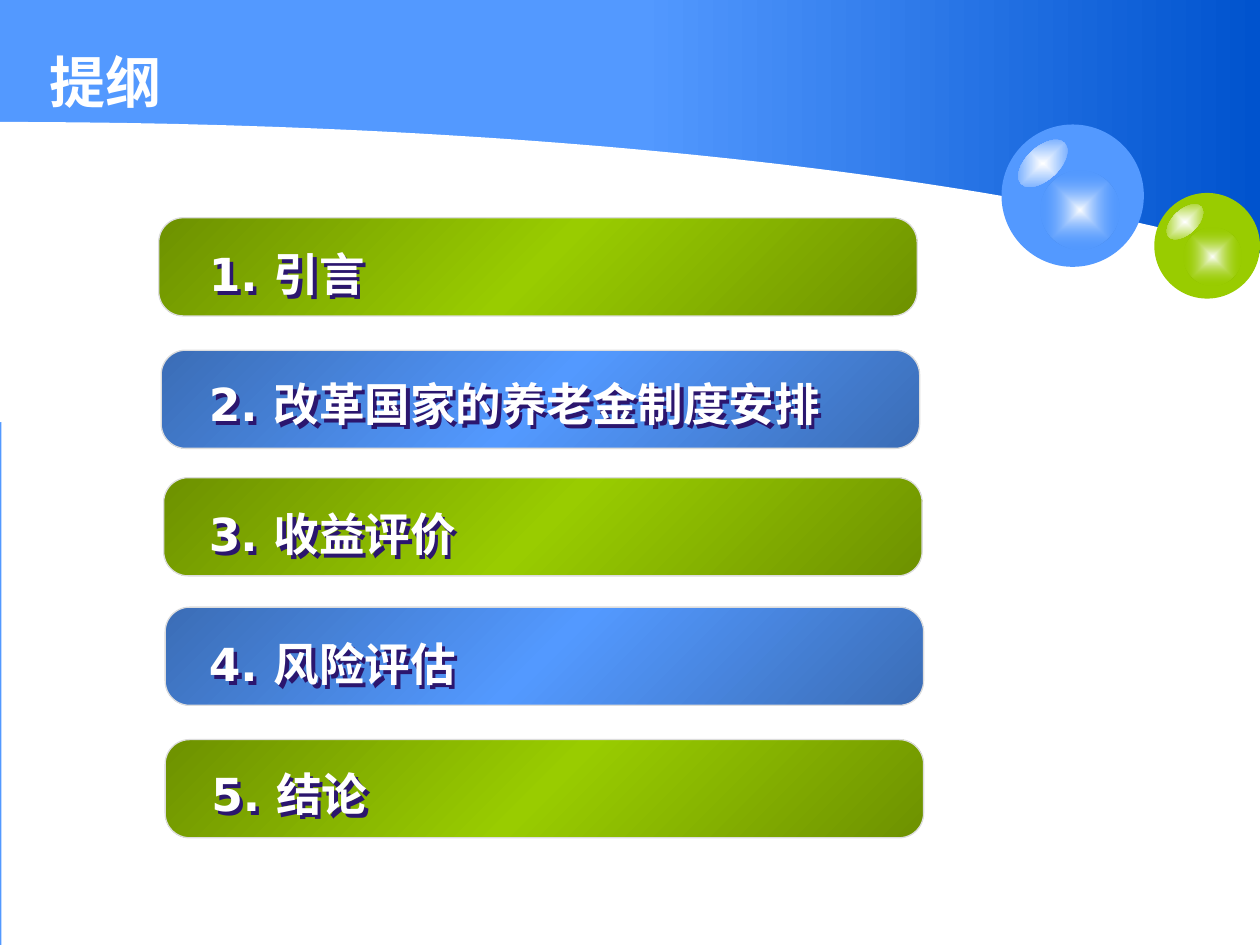
from typing import NamedTuple

from lxml import etree
from pptx import Presentation
from pptx.dml.color import RGBColor
from pptx.enum.shapes import MSO_SHAPE
from pptx.enum.text import MSO_ANCHOR
from pptx.oxml import parse_xml
from pptx.oxml.ns import qn
from pptx.util import Cm, Pt

RECT = MSO_SHAPE.RECTANGLE
ROUNDED = MSO_SHAPE.ROUNDED_RECTANGLE
OVAL = MSO_SHAPE.OVAL
MIDDLE = MSO_ANCHOR.MIDDLE
BOTTOM = MSO_ANCHOR.BOTTOM

WHITE = RGBColor(0xFF, 0xFF, 0xFF)
BLUE = RGBColor(0x53, 0x99, 0xFF)
DEEP_BLUE = RGBColor(0x00, 0x53, 0xCE)
GREEN = RGBColor(0x99, 0xCC, 0x00)
EDGE = RGBColor(0xDD, 0xDD, 0xDD)
SHADOW = RGBColor(0x2B, 0x16, 0x6E)

LATIN = "DejaVu Sans"
CJK = "Noto Sans CJK SC"
A_NS = 'xmlns:a="http://schemas.openxmlformats.org/drawingml/2006/main"'
LINEAR = '<a:lin ang="{}" scaled="1"/>'
RADIAL = ('<a:path path="shape"><a:fillToRect l="50000" t="50000" '
          'r="50000" b="50000"/></a:path>')
DARKEN = '<a:shade val="46275"/>'
CLEAR = '<a:alpha val="0"/>'


class Stop(NamedTuple):
    percent: int
    color: RGBColor
    change: str = ""


class Ball(NamedTuple):
    left: float
    top: float
    size: float
    color: RGBColor


class Item(NamedTuple):
    title: str
    color: RGBColor
    bar_left: float
    bar_top: float
    text_left: float
    text_width: float


BALLS = [Ball(23.27, 3.89, 2.13, GREEN), Ball(20.19, 2.51, 2.87, BLUE)]
ITEMS = [
    Item("引言", GREEN, 3.2, 4.39, 3.96, 12.88),
    Item("改革国家的养老金制度安排", BLUE, 3.25, 7.06, 3.96, 14.3),
    Item("收益评价", GREEN, 3.3, 9.63, 3.96, 14.3),
    Item("风险评估", BLUE, 3.33, 12.24, 3.96, 12.88),
    Item("结论", GREEN, 3.33, 14.91, 4.01, 14.3),
]
LABEL_TOP, LABEL_STEP = 4.72, 2.62
WAVE = [(0, 2.46), (10.19, 2.46), (19.74, 3.45), (25.45, 5.13)]
WAVE_STEPS = 60


def add_shape(s, kind, left: float, top: float, width: float, height: float):
    sp = s.shapes.add_shape(kind, Cm(left), Cm(top), Cm(width), Cm(height))
    sp.shadow.inherit = False
    sp.line.fill.background()
    return sp


def fill_solid(sp, color: RGBColor) -> None:
    sp.fill.solid()
    sp.fill.fore_color.rgb = color


def fill_gradient(sp, stops: list[Stop], course: str) -> None:
    marks = "".join(
        f'<a:gs pos="{stop.percent * 1000}"><a:srgbClr val="{stop.color}">'
        f'{stop.change}</a:srgbClr></a:gs>' for stop in stops)
    sp.fill.background()
    empty = sp._element.spPr.find(qn("a:noFill"))
    empty.getparent().replace(empty, parse_xml(
        f'<a:gradFill {A_NS} rotWithShape="1"><a:gsLst>{marks}</a:gsLst>'
        f'{course}</a:gradFill>'))


def bezier(t: float) -> tuple[int, int]:
    weights = ((1 - t) ** 3, 3 * t * (1 - t) ** 2, 3 * t * t * (1 - t), t ** 3)
    x, y = (sum(w * pt[i] for w, pt in zip(weights, WAVE)) for i in (0, 1))
    return Cm(x), Cm(y)


def add_wave(s) -> None:
    curve = [bezier(i / WAVE_STEPS) for i in range(WAVE_STEPS + 1)]
    builder = s.shapes.build_freeform(*curve[0])
    builder.add_line_segments(curve[1:] + [(Cm(0), Cm(8.51))], close=True)
    sp = builder.convert_to_shape()
    sp.shadow.inherit = False
    sp.line.fill.background()
    fill_solid(sp, WHITE)


def add_ball(s, ball: Ball) -> None:
    left, top, size, color = ball
    fill_solid(add_shape(s, OVAL, left, top, size, size), color)
    glow = add_shape(s, OVAL, left + 0.274 * size, top + 0.325 * size,
                     0.555 * size, 0.555 * size)
    fill_gradient(glow, [Stop(0, WHITE), Stop(100, color, CLEAR)], RADIAL)
    shine = add_shape(s, OVAL, left + 0.08 * size, top + 0.158 * size,
                      0.42 * size, 0.23 * size)
    shine.rotation = 317.2
    fill_gradient(shine, [Stop(0, WHITE), Stop(100, color)], RADIAL)


def add_text(s, left: float, top: float, width: float, height: float,
             anchor, size: int, runs: list[tuple[str, str]]):
    box = s.shapes.add_textbox(Cm(left), Cm(top), Cm(width), Cm(height))
    tf = box.text_frame
    tf.word_wrap = True
    tf.vertical_anchor = anchor
    p = tf.paragraphs[0]
    for text, font in runs:
        r = p.add_run()
        r.text = text
        r.font.size = Pt(size)
        r.font.bold = True
        r.font.color.rgb = WHITE
        r.font.name = font
        etree.SubElement(r.font._element, qn("a:ea"), typeface=font)
    return box


def add_bar(s, item: Item) -> None:
    bar = add_shape(s, ROUNDED, item.bar_left, item.bar_top, 15.29, 1.98)
    bar.adjustments[0] = 0.25
    ends = [Stop(0, item.color, DARKEN), Stop(50, item.color),
            Stop(100, item.color, DARKEN)]
    fill_gradient(bar, ends, LINEAR.format(2700000))
    bar.line.color.rgb = EDGE
    bar.line.width = Pt(0.75)


def add_label(s, index: int, item: Item) -> None:
    box = add_text(s, item.text_left, LABEL_TOP + index * LABEL_STEP,
                   item.text_width, 1.6, MIDDLE, 26,
                   [(f"{index + 1}. ", LATIN), (item.title, CJK)])
    box._element.spPr.append(parse_xml(
        f'<a:effectLst {A_NS}><a:outerShdw dist="35921" dir="2700000" '
        f'algn="ctr" rotWithShape="0"><a:srgbClr val="{SHADOW}"/>'
        f'</a:outerShdw></a:effectLst>'))


def main() -> None:
    prs = Presentation()
    prs.slide_width, prs.slide_height = Cm(25.4), Cm(19.05)
    s = prs.slides.add_slide(prs.slide_layouts[6])
    s.background.fill.solid()
    s.background.fill.fore_color.rgb = BLUE

    header = add_shape(s, RECT, 12.88, 0, 12.52, 7.54)
    fill_gradient(header, [Stop(0, BLUE), Stop(100, DEEP_BLUE)],
                  LINEAR.format(0))
    fill_solid(add_shape(s, RECT, 0.03, 5.11, 25.37, 13.94), WHITE)
    add_wave(s)
    for ball in BALLS:
        add_ball(s, ball)

    add_text(s, 0.74, 0.61, 23.22, 1.83, BOTTOM, 32, [("提纲", CJK)])
    for index, item in enumerate(ITEMS):
        add_bar(s, item)
        add_label(s, index, item)
    prs.save("out.pptx")


if __name__ == "__main__":
    main()
